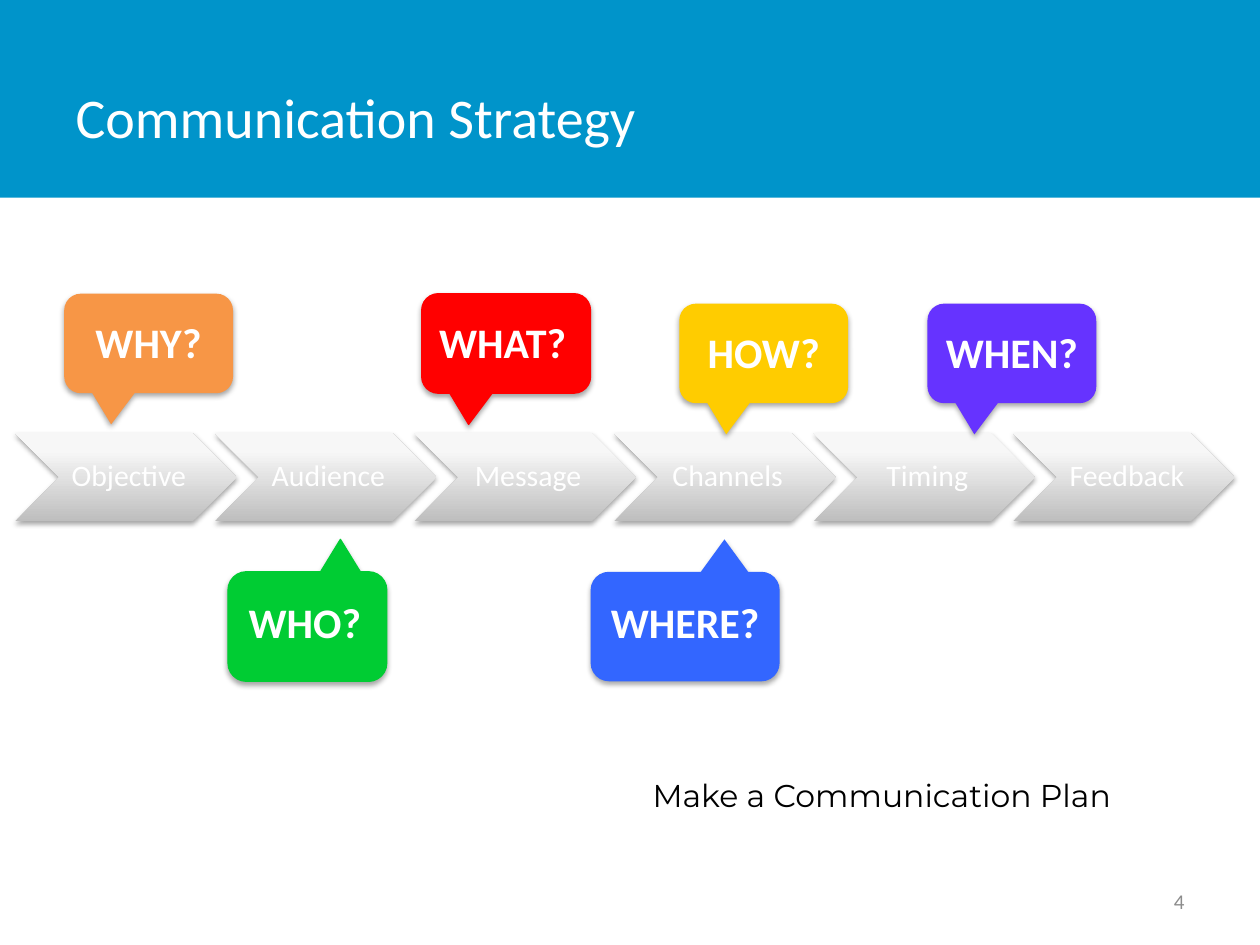
from copy import deepcopy
from dataclasses import dataclass

from lxml.etree import SubElement
from pptx import Presentation
from pptx.dml.color import RGBColor
from pptx.enum.shapes import MSO_SHAPE as Shape
from pptx.enum.text import MSO_ANCHOR as Anchor, MSO_AUTO_SIZE as AutoSize, PP_ALIGN as Align
from pptx.oxml.ns import qn
from pptx.util import Pt


@dataclass(frozen=True)
class Theme:
    """Colours, fonts and type sizes of the slide."""
    band: str = "0094CA"
    light: str = "FFFFFF"
    dark: str = "000000"
    muted: str = "8C8C8C"
    chevron: tuple = ((0, "BEBEBE"), (0.8, "F7F7F7"), (1, "F8F8F8"))
    why: str = "F79646"
    who: str = "00CC33"
    what: str = "FF0000"
    how: str = "FFCC00"
    where: str = "3366FF"
    when: str = "6633FF"
    body_font: str = "Calibri"
    plan_font: str = "Montserrat"
    title_size: int = 32
    question_size: int = 24
    plan_size: int = 18
    step_size: int = 17
    number_size: int = 12


THEME = Theme()


def apply(target, values):
    """Set each attribute of the target from a dict."""
    for attribute, value in values.items():
        setattr(target, attribute, value)


def place(item, box):
    """Move an item to a box given in points."""
    apply(item, dict(zip(("left", "top", "width", "height"), map(Pt, box))))


def write(item, text, size, color, align=Align.LEFT, font=THEME.body_font,
          bold=False, line_spacing=None, **frame_values):
    """Write one formatted paragraph into a shape."""
    frame = item.text_frame
    frame.text = text
    apply(frame, {"word_wrap": True, "auto_size": AutoSize.NONE, **frame_values})
    paragraph = frame.paragraphs[0]
    apply(paragraph, {"alignment": align, "line_spacing": line_spacing})
    run_font = paragraph.runs[0].font
    apply(run_font, {"name": font, "size": Pt(size), "bold": bold})
    run_font.color.rgb = RGBColor.from_string(color)


def add_label(shapes, box, text, size, color, **values):
    """Add a text box holding one paragraph."""
    write(shapes.add_textbox(*map(Pt, box)), text, size, color, **values)


def add_outline(shapes, kind, box, color=None, line=None):
    """Add a preset shape without an inherited shadow."""
    item = shapes.add_shape(kind, *map(Pt, box))
    item.shadow.inherit = False
    if color:
        item.fill.solid()
        item.fill.fore_color.rgb = RGBColor.from_string(color)
    if line:
        item.line.width = Pt(line)
        item.line.color.rgb = RGBColor.from_string(color)
    else:
        item.line.fill.background()
    return item


def drop_shadow(item):
    """Give a shape a soft shadow below it."""
    effects = item._element.spPr.find(qn("a:effectLst"))
    shadow = SubElement(effects, qn("a:outerShdw"), blurRad=str(Pt(3.1)), dist=str(Pt(1.8)),
                        dir="5400000", rotWithShape="0")
    tint = SubElement(shadow, qn("a:srgbClr"), val=THEME.dark)
    SubElement(tint, qn("a:alpha"), val="35000")


def shade(item, stops):
    """Fill a shape with a three-stop gradient rising from its foot."""
    item.fill.gradient()
    item.fill.gradient_angle = 90
    stop_list = next(item._element.spPr.iter(qn("a:gsLst")))
    stop_list.append(deepcopy(stop_list[-1]))
    for stop, (position, color) in zip(item.fill.gradient_stops, stops):
        stop.position = position
        stop.color.rgb = RGBColor.from_string(color)


def build_header(slide, box, text):
    """Lay the band behind the title and format the title."""
    left, top, width, height = box
    band = add_outline(slide.shapes, Shape.RECTANGLE, box, THEME.band)
    title = slide.shapes.title
    title._element.addprevious(band._element)
    place(title, (left + 36, top + 21.6, 562.3, 90))
    write(title, text, THEME.title_size, THEME.light, vertical_anchor=Anchor.MIDDLE)


def build_process(slide, box, steps):
    """Spread the steps as evenly spaced chevrons across the box."""
    left, top, width, height = box
    step_width, inset = 126.7, 25.2
    pitch = (width - step_width) / (len(steps) - 1)
    shapes = slide.shapes.add_group_shape().shapes
    for index, step in enumerate(steps):
        x = left + index * pitch
        chevron = add_outline(shapes, Shape.CHEVRON, (x, top, step_width, height))
        shade(chevron, THEME.chevron)
        drop_shadow(chevron)
        add_label(shapes, (x + inset, top, step_width - 2 * inset, height), step,
                  THEME.step_size, THEME.light, align=Align.CENTER, line_spacing=0.9,
                  vertical_anchor=Anchor.MIDDLE, margin_left=Pt(5), margin_top=Pt(1.6),
                  margin_right=Pt(1.6), margin_bottom=Pt(1.6))


def build_question(slide, box, text, color, below=False, line=None, align=Align.CENTER,
                   trim=0):
    """Add a callout pointing at the process, with its question on top."""
    left, top, width, height = box
    shapes = slide.shapes.add_group_shape().shapes
    bubble = add_outline(shapes, Shape.ROUNDED_RECTANGULAR_CALLOUT, box, color, line)
    tip = (-0.208, 0.796, 0.167) if below else (-0.222, 0.813, 0.167)
    for index, value in enumerate(tip):
        bubble.adjustments[index] = value
    bubble.rotation = 180 if below else 0
    drop_shadow(bubble)
    inset, drop = (0, 10.8) if below else (2.9, 9.4)
    add_label(shapes, (left + inset, top + drop, width - 2 * inset - trim, 36), text,
              THEME.question_size, THEME.light, align=align, bold=True,
              auto_size=AutoSize.SHAPE_TO_FIT_TEXT)


def build_footer(slide, box, plan, number):
    """Add the call to action and the slide number."""
    left, top, width, height = box
    add_label(slide.shapes, (left, top, 296.6, 29), plan, THEME.plan_size, THEME.dark,
              font=THEME.plan_font, word_wrap=False, auto_size=AutoSize.SHAPE_TO_FIT_TEXT)
    add_label(slide.shapes, (left + width - 167.8, top + height - 28.8, 167.8, 28.8), number,
              THEME.number_size, THEME.muted, align=Align.RIGHT, vertical_anchor=Anchor.MIDDLE)


def main():
    """Build and save the slide."""
    deck = Presentation()
    apply(deck, {"slide_width": Pt(720), "slide_height": Pt(540)})
    slide = deck.slides.add_slide(deck.slide_layouts[5])
    build_header(slide, (0, 0, 720, 113), "Communication Strategy")
    build_process(slide, (8.6, 247.5, 697, 50.5),
                  ("Objective", "Audience", "Message", "Channels", "Timing", "Feedback"))
    build_footer(slide, (365.8, 440, 318.2, 89.2), "Make a Communication Plan", "4")
    width, height, low_height = 96.5, 56.9, 62.6
    high_row, mid_row, low_row = 167.8, 173.5, 326.7
    build_question(slide, (241, high_row, width, height), "WHAT?", THEME.what,
                   line=0.75, align=Align.LEFT)
    build_question(slide, (130.3, low_row, 90.7, low_height), "WHO?", THEME.who,
                   below=True, line=0.75, trim=2.9)
    build_question(slide, (388.2, mid_row, width, height), "HOW?", THEME.how)
    build_question(slide, (337.5, low_row, 108, low_height), "WHERE?", THEME.where, below=True)
    build_question(slide, (530, mid_row, width, height), "WHEN?", THEME.when)
    build_question(slide, (36.7, high_row, width, height), "WHY?", THEME.why)
    deck.save("out.pptx")


if __name__ == "__main__":
    main()
